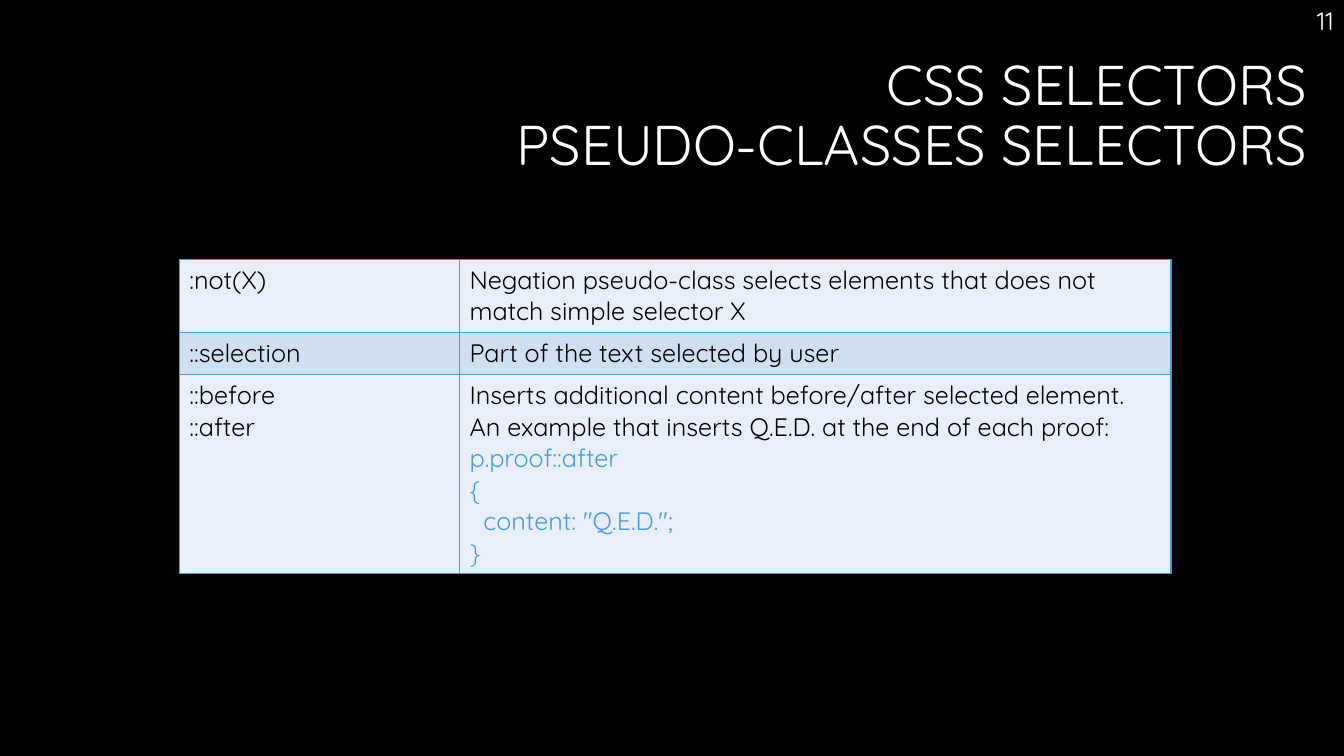
"""Build the slide on CSS pseudo-class selectors."""
from dataclasses import dataclass

from lxml.etree import SubElement
from pptx import Presentation
from pptx.dml.color import RGBColor
from pptx.enum.text import MSO_ANCHOR, PP_ALIGN
from pptx.oxml.ns import qn
from pptx.util import Cm, Pt


@dataclass(frozen=True)
class Theme:
    font: str = "Quicksand"
    back: str = "000000"
    light: str = "FFFFFF"
    dark: str = "000000"
    code: str = "4A9BDC"
    line: str = "4A9BDC"
    bands: tuple = ("E9EFF9", "D0DEF2")
    head: int = 40
    body: int = 18
    edge: int = 1


THEME = Theme()
WIDTHS = (7.06, 17.93)
HEIGHTS = (1.85, 1.05, 5.03)
INDENT = 0.35
ROWS = (
    ([":not(X)"],
     ["Negation pseudo-class selects elements that does not match simple selector X"], []),
    (["::selection"], ["Part of the text selected by user"], []),
    (["::before", "::after"],
     ["Inserts additional content before/after selected element. "
      "An example that inserts Q.E.D. at the end of each proof:"],
     ["p.proof::after", "{", "\tcontent: \"Q.E.D.\";", "}"]),
)


def add_run(para, text, size, color):
    run = para.add_run()
    run.text = text
    run.font.name = THEME.font
    run.font.size = Pt(size)
    run.font.color.rgb = RGBColor.from_string(color)


def add_title(slide, lines):
    title = slide.shapes.title
    title.left, title.top = Cm(0.66), Cm(1.17)
    title.width, title.height = Cm(32.54), Cm(3.58)
    frame = title.text_frame
    frame.word_wrap = True
    frame.vertical_anchor = MSO_ANCHOR.MIDDLE
    para = frame.paragraphs[0]
    para.alignment = PP_ALIGN.RIGHT
    para.line_spacing = 0.9
    for index, line in enumerate(lines):
        if index:
            para.add_line_break()
        add_run(para, line, THEME.head, THEME.light)


def add_number(slide, text):
    box = slide.shapes.add_textbox(Cm(26.54), Cm(0), Cm(7.32), Cm(1.02))
    box.text_frame.word_wrap = True
    para = box.text_frame.paragraphs[0]
    para.alignment = PP_ALIGN.RIGHT
    add_run(para, text, THEME.body, THEME.light)


def add_edges(cell):
    props = cell._tc.get_or_add_tcPr()
    for index, side in enumerate(("lnL", "lnR", "lnT", "lnB")):
        edge = SubElement(props, qn(f"a:{side}"), w=str(Pt(THEME.edge)))
        fill = SubElement(edge, qn("a:solidFill"))
        SubElement(fill, qn("a:srgbClr"), val=THEME.line)
        props.insert(index, edge)


def fill_cell(cell, band, plain, code=()):
    cell.fill.solid()
    cell.fill.fore_color.rgb = RGBColor.from_string(band)
    add_edges(cell)
    frame = cell.text_frame
    lines = [(text, THEME.dark) for text in plain]
    lines += [(text, THEME.code) for text in code]
    for index, (text, color) in enumerate(lines):
        para = frame.add_paragraph() if index else frame.paragraphs[0]
        if text.startswith("\t"):
            para._p.get_or_add_pPr().set("marL", str(Cm(INDENT)))
        add_run(para, text.strip(), THEME.body, color)


def add_grid(slide):
    frame = slide.shapes.add_table(
        len(ROWS), len(WIDTHS), Cm(4.52), Cm(6.53), Cm(sum(WIDTHS)), Cm(sum(HEIGHTS)))
    table = frame.table
    table.first_row = False
    for column, width in zip(table.columns, WIDTHS):
        column.width = Cm(width)
    for index, (name, note, code) in enumerate(ROWS):
        table.rows[index].height = Cm(HEIGHTS[index])
        band = THEME.bands[index % len(THEME.bands)]
        fill_cell(table.cell(index, 0), band, name)
        fill_cell(table.cell(index, 1), band, note, code)


def main():
    deck = Presentation()
    deck.slide_width, deck.slide_height = Cm(33.87), Cm(19.05)
    slide = deck.slides.add_slide(deck.slide_layouts[5])
    slide.background.fill.solid()
    slide.background.fill.fore_color.rgb = RGBColor.from_string(THEME.back)
    add_title(slide, ("CSS SELECTORS", "PSEUDO-CLASSES SELECTORS"))
    add_number(slide, "11")
    add_grid(slide)
    deck.save("out.pptx")


if __name__ == "__main__":
    main()
